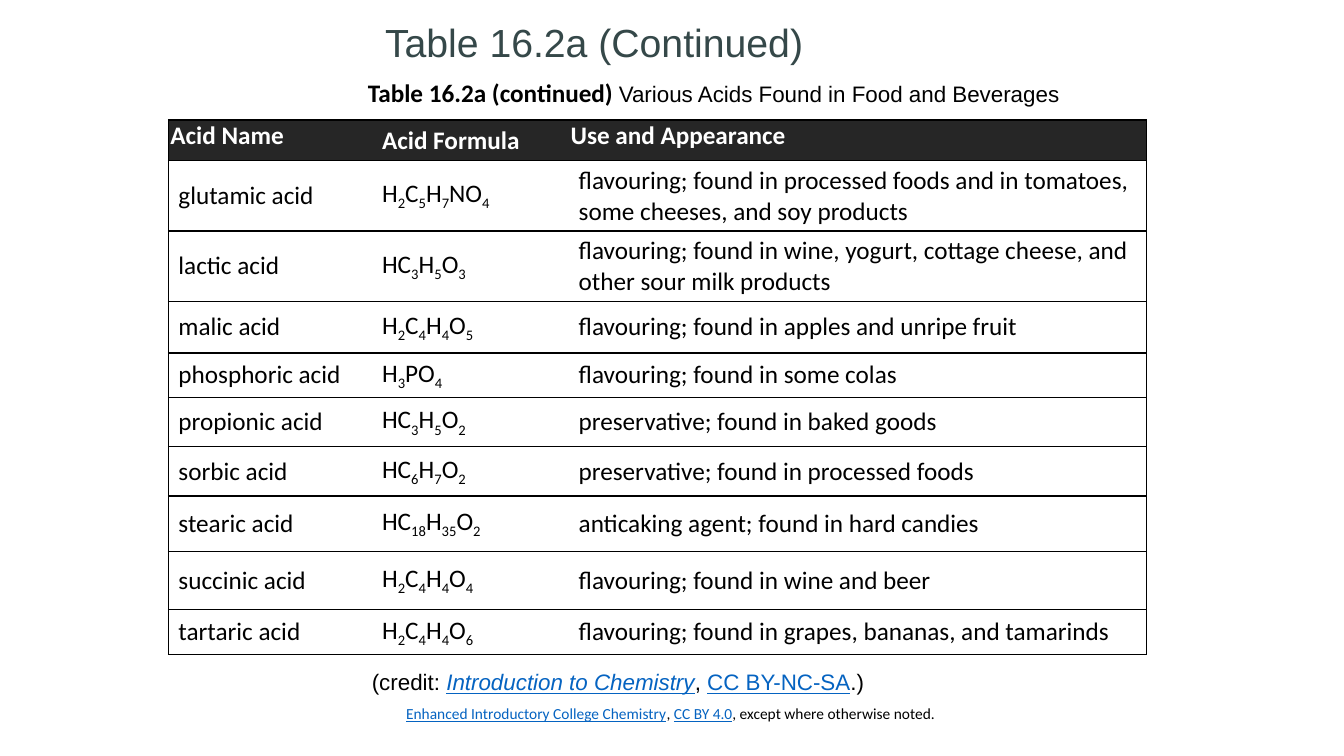
"""Build the slide on acids found in food and beverages."""
from itertools import groupby

from lxml import etree
from pptx import Presentation
from pptx import util as u
from pptx.dml.color import RGBColor
from pptx.enum import text
from pptx.oxml.ns import qn

BLACK = RGBColor(0x00, 0x00, 0x00)
WHITE = RGBColor(0xFF, 0xFF, 0xFF)
CHARCOAL = RGBColor(0x26, 0x26, 0x26)
SLATE = RGBColor(0x35, 0x48, 0x49)
LINK_BLUE = RGBColor(0x05, 0x63, 0xC1)

PAGE_WIDTH = u.Inches(13.33)
PAGE_HEIGHT = u.Inches(7.5)
LINK = {"color": LINK_BLUE, "underline": True}

HEADINGS = ("Acid Name", "Acid Formula", "Use and Appearance")
ACIDS = (
    ("glutamic acid", "H2C5H7NO4",
     "flavouring; found in processed foods and in tomatoes, some cheeses, and soy products"),
    ("lactic acid", "HC3H5O3",
     "flavouring; found in wine, yogurt, cottage cheese, and other sour milk products"),
    ("malic acid", "H2C4H4O5", "flavouring; found in apples and unripe fruit"),
    ("phosphoric acid", "H3PO4", "flavouring; found in some colas"),
    ("propionic acid", "HC3H5O2", "preservative; found in baked goods"),
    ("sorbic acid", "HC6H7O2", "preservative; found in processed foods"),
    ("stearic acid", "HC18H35O2", "anticaking agent; found in hard candies"),
    ("succinic acid", "H2C4H4O4", "flavouring; found in wine and beer"),
    ("tartaric acid", "H2C4H4O6", "flavouring; found in grapes, bananas, and tamarinds"),
)
COLUMN_SHARES = (15.15, 14.63, 42.99)
ROW_SHARES = (5.2, 5.33, 6.53, 6.8, 5.87, 6.53, 6.53, 7.33, 7.73, 5.73)


def across(share):
    """Turn a percentage of the page width into a length."""
    return u.Emu(round(PAGE_WIDTH * share / 100))


def down(share):
    """Turn a percentage of the page height into a length."""
    return u.Emu(round(PAGE_HEIGHT * share / 100))


def add_span(para, words, size=18, font="Calibri", color=BLACK, bold=False,
             italic=False, underline=False, subscript=False):
    """Append one formatted run to a paragraph."""
    span = para.add_run()
    span.text = words
    span.font.size = u.Pt(size)
    span.font.name = font
    span.font.color.rgb = color
    span.font.bold = bold
    span.font.italic = italic
    span.font.underline = underline
    if subscript:
        span._r.get_or_add_rPr().set("baseline", "-25000")


def add_line(page, place, spans, wrap=True, anchor=text.MSO_ANCHOR.TOP,
             spacing=None, **style):
    """Add a one-paragraph text box made of (words, format) spans."""
    left, top, width, height = place
    box = page.shapes.add_textbox(across(left), down(top), across(width), down(height))
    frame = box.text_frame
    frame.word_wrap = wrap
    frame.vertical_anchor = anchor
    para = frame.paragraphs[0]
    para.line_spacing = spacing
    for words, changes in spans:
        add_span(para, words, **{**style, **changes})


def add_border(cell, side, visible):
    """Draw or hide the border on one side of a cell."""
    properties = cell._tc.get_or_add_tcPr()
    line = etree.SubElement(properties, qn(f"a:ln{side}"), w=str(u.Pt(1)))
    if visible:
        fill = etree.SubElement(line, qn("a:solidFill"))
        etree.SubElement(fill, qn("a:srgbClr"), val=str(BLACK))
    else:
        etree.SubElement(line, qn("a:noFill"))


def format_cell(cell, column, is_heading):
    """Set the borders, fill, anchor and margins of a cell."""
    last = len(COLUMN_SHARES) - 1
    for side, visible in (("L", column == 0), ("R", column == last),
                          ("T", True), ("B", True)):
        add_border(cell, side, visible)
    cell.fill.solid()
    cell.fill.fore_color.rgb = CHARCOAL if is_heading else WHITE
    if is_heading and column != 1:
        cell.vertical_anchor = text.MSO_ANCHOR.TOP
        cell.margin_left = cell.margin_right = across(0.15)
        cell.margin_top = cell.margin_bottom = down(0.13)
    else:
        cell.vertical_anchor = text.MSO_ANCHOR.MIDDLE


def add_acid_table(page):
    """Add the table of acids, with digits in formulas as subscripts."""
    rows = (HEADINGS, *ACIDS)
    frame = page.shapes.add_table(len(rows), len(HEADINGS), across(12.53), down(15.87),
                                  across(sum(COLUMN_SHARES)), down(sum(ROW_SHARES)))
    table = frame.table
    for column, share in zip(table.columns, COLUMN_SHARES):
        column.width = across(share)
    for row, share in zip(table.rows, ROW_SHARES):
        row.height = down(share)
    for r, entries in enumerate(rows):
        is_heading = r == 0
        for c, words in enumerate(entries):
            cell = table.cell(r, c)
            format_cell(cell, c, is_heading)
            para = cell.text_frame.paragraphs[0]
            for is_digit, part in groupby(words, str.isdigit):
                add_span(para, "".join(part), color=WHITE if is_heading else BLACK,
                         bold=is_heading, subscript=is_digit)


def main():
    """Build and save the deck."""
    deck = Presentation()
    deck.slide_width, deck.slide_height = PAGE_WIDTH, PAGE_HEIGHT
    page = deck.slides.add_slide(deck.slide_layouts[6])
    add_line(page, (29.48, 92.53, 53.04, 5.33),
             [("Enhanced Introductory College Chemistry", LINK), (", ", {}),
              ("CC BY 4.0", LINK), (", except where otherwise noted.", {})], size=11)
    add_line(page, (27.91, 0, 33.31, 9.33), [("Table 16.2a (Continued)", {})],
             anchor=text.MSO_ANCHOR.BOTTOM, spacing=0.9,
             size=28, font="Arial", color=SLATE)
    add_line(page, (26.63, 9.6, 60.84, 5.33),
             [("Table 16.2a (continued) ", {"bold": True}),
              ("Various Acids Found in Food and Beverages", {"size": 16, "font": "Arial"})])
    add_acid_table(page)
    add_line(page, (26.93, 87.73, 39.53, 4.93),
             [("(credit: ", {}), ("Introduction to Chemistry", {**LINK, "italic": True}),
              (", ", {}), ("CC BY-NC-SA", LINK), (".)", {})],
             wrap=False, size=16, font="Arial")
    deck.save("out.pptx")


if __name__ == "__main__":
    main()
